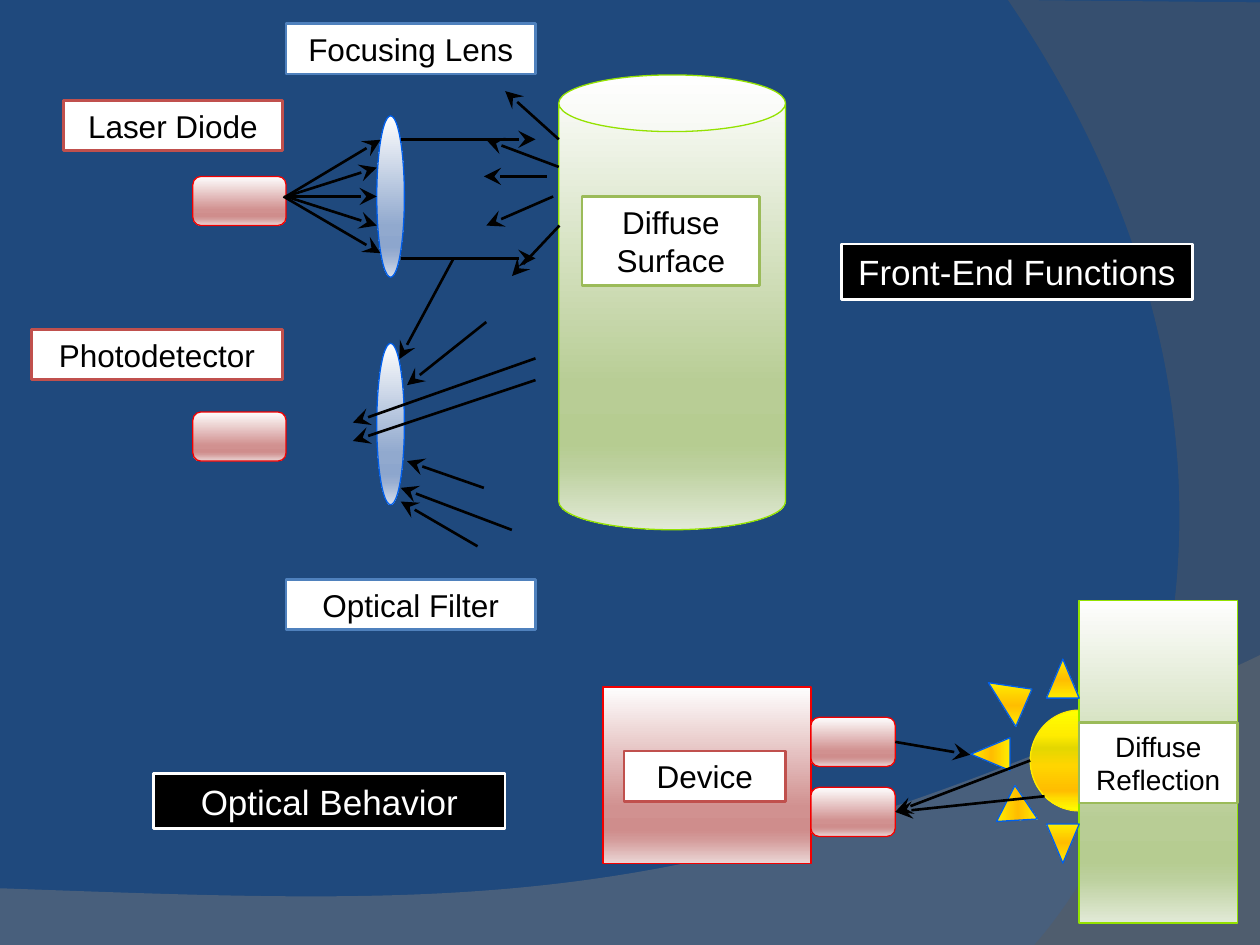
from dataclasses import dataclass
from typing import Optional

from lxml import etree
from pptx import Presentation
from pptx import util as u
from pptx.dml.color import RGBColor
from pptx.enum import shapes as kinds, text
from pptx.oxml.ns import qn

NAVY = RGBColor(0x1F, 0x49, 0x7D)
BLACK = RGBColor(0, 0, 0)
WHITE = RGBColor(0xFF, 0xFF, 0xFF)
LOWER_GREY = RGBColor(0x7B, 0x7B, 0x7B)
SIDE_GREY = RGBColor(0x5A, 0x5A, 0x5A)
RED_FRAME = RGBColor(0xC0, 0x50, 0x4D)
BLUE_FRAME = RGBColor(0x4F, 0x81, 0xBD)
GREEN_FRAME = RGBColor(0x9B, 0xBB, 0x59)
RED_EDGE = RGBColor(0xF3, 0, 0)
BLUE_EDGE = RGBColor(0, 0x5F, 0xEC)
GREEN_EDGE = RGBColor(0x94, 0xE2, 0)
YELLOW = RGBColor(0xFF, 0xEC, 0)

SHAPE = kinds.MSO_SHAPE


@dataclass(frozen=True)
class Finish:
    stops: str  # "percent colour" pairs, from top to bottom
    edge: RGBColor


RED = Finish("0 FEFEFE 68 D19190 81 CF8D8C 86 D39998 100 EBD6D5", RED_EDGE)
BLUE = Finish("0 FEFEFE 68 91A9CE 81 8DA6CD 86 99AED1 100 D6DDEA", BLUE_EDGE)
GREEN = Finish("0 FEFEFE 68 B8CD95 81 B6CC91 86 BCD09D 100 E2EAD7", GREEN_EDGE)
SUN = Finish("0 FFFF00 25 FFEC00 38 E4D700 55 FFD500 80 FFBD00 88 FFDD00 100 FFFF00", YELLOW)
RAY = Finish("0 FFEC00 52 FFBD00 100 FFEC00", BLUE_EDGE)


@dataclass(frozen=True)
class Part:
    kind: int
    box: tuple
    finish: Finish
    rotation: float = 0
    adjust: Optional[float] = None


@dataclass(frozen=True)
class Band:
    corners: list  # the last side, between the last two corners, is curved
    pulls: list
    colour: RGBColor
    opacity: int


@dataclass(frozen=True)
class Label:
    words: str
    box: tuple
    frame: RGBColor
    size: int = 18
    fill: RGBColor = WHITE
    ink: RGBColor = BLACK


def points(values: tuple) -> list:
    return [u.Pt(v) for v in values]


def apply_finish(shape, finish: Finish, angle: float = 270) -> None:
    shape.shadow.inherit = False
    shape.line.color.rgb = finish.edge
    shape.line.width = u.Pt(0.75)
    shape.fill.gradient()
    shape.fill.gradient_angle = angle
    stop_list = shape._element.spPr.find(".//" + qn("a:gsLst"))
    for stop in list(stop_list):
        stop_list.remove(stop)
    tokens = finish.stops.split()
    for percent, colour in zip(tokens[::2], tokens[1::2]):
        stop = etree.SubElement(stop_list, qn("a:gs"), pos=str(int(percent) * 1000))
        etree.SubElement(stop, qn("a:srgbClr"), val=colour)


def draw_part(slide, part: Part):
    shape = slide.shapes.add_shape(part.kind, *points(part.box))
    shape.rotation = part.rotation
    if part.adjust is not None:
        shape.adjustments[0] = part.adjust
    apply_finish(shape, part.finish)
    return shape


def draw_outline(slide, corners: list):
    start, *others = [points(corner) for corner in corners]
    builder = slide.shapes.build_freeform(*start)
    builder.add_line_segments(others, close=True)
    shape = builder.convert_to_shape()
    shape.shadow.inherit = False
    return shape


def draw_band(slide, band: Band) -> None:
    shape = draw_outline(slide, band.corners)
    shape.line.fill.background()
    shape.fill.solid()
    shape.fill.fore_color.rgb = band.colour
    properties = shape._element.spPr
    tint = properties.find(".//" + qn("a:srgbClr"))
    etree.SubElement(tint, qn("a:alpha"), val=str(band.opacity * 1000))
    # Bend the last side
    side = properties.findall(".//" + qn("a:lnTo"))[-1]
    bend = etree.Element(qn("a:cubicBezTo"))
    for x, y in [*band.pulls, band.corners[-1]]:
        etree.SubElement(bend, qn("a:pt"), x=str(u.Pt(x) - shape.left), y=str(u.Pt(y) - shape.top))
    side.getparent().replace(side, bend)


def draw_arrow(slide, x1: float, y1: float, x2: float, y2: float):
    arrow = slide.shapes.add_connector(kinds.MSO_CONNECTOR.STRAIGHT, *points((x1, y1, x2, y2)))
    arrow.line.color.rgb = BLACK
    arrow.line.width = u.Pt(1.5)
    etree.SubElement(arrow.line._get_or_add_ln(), qn("a:tailEnd"), type="stealth", w="lg", len="lg")
    etree.SubElement(arrow._element.spPr, qn("a:effectLst"))
    return arrow


def write_label(shape, label: Label) -> None:
    shape.left, shape.top, shape.width, shape.height = points(label.box)
    shape.fill.solid()
    shape.fill.fore_color.rgb = label.fill
    shape.line.color.rgb = label.frame
    shape.line.width = u.Pt(1.5)
    frame = shape.text_frame
    frame.word_wrap = True
    frame.auto_size = text.MSO_AUTO_SIZE.NONE
    frame.vertical_anchor = text.MSO_ANCHOR.MIDDLE
    paragraph = frame.paragraphs[0]
    paragraph.alignment = text.PP_ALIGN.CENTER
    run = paragraph.add_run()
    run.text = label.words
    run.font.name = "Arial"
    run.font.size = u.Pt(label.size)
    run.font.color.rgb = label.ink


def draw_label(slide, label: Label) -> None:
    shape = slide.shapes.add_shape(SHAPE.RECTANGLE, *points(label.box))
    shape.shadow.inherit = False
    write_label(shape, label)


BANDS = [
    Band([(0, 540), (720, 540), (720, 374.4), (0, 507.6)],
         [(402.5, 524.9), (281.5, 517.7)], LOWER_GREY, 45),
    Band([(720, 1.4), (720, 540), (591.1, 540), (576, 0)],
         [(673.2, 445.7), (733, 229.7)], SIDE_GREY, 40),
]
OPTICS = [
    Part(SHAPE.CAN, (319.3, 42.8, 129.6, 259.9), GREEN, adjust=0.25),
    *(Part(SHAPE.OVAL, (215.3, y, 15.8, 92.2), BLUE) for y in (66.2, 196.2)),
    *(Part(SHAPE.ROUNDED_RECTANGLE, (110.2, y, 53.3, 28.1), RED, adjust=0.167)
      for y in (100.8, 235.4)),
]
REFLECTION = [
    Part(SHAPE.OVAL, (588.7, 405.8, 56.2, 57.6), SUN),
    Part(SHAPE.RECTANGLE, (616.6, 343.2, 90.7, 184.3), GREEN),
    Part(SHAPE.RECTANGLE, (344.6, 392.6, 118.8, 100.8), RED),
    *(Part(SHAPE.ISOSCELES_TRIANGLE, (x, y, 18.7, 22.3), RAY, rotation)
      for x, y, rotation in ((598, 376.6, 0), (556.6, 419.8, 270), (598, 470.9, 180))),
]
SLANTED_RAYS = [  # corners, gradient angle
    ([(580.5, 415.2), (564.8, 390.1), (589.7, 393.8)], 270),
    ([(592.9, 468), (569.5, 469.4), (580, 448.8)], 0),
]
LASER_BEAMS = [(163.4, 112.3, x, y) for x, y in
               ((217.4, 79.9), (215.3, 95.8), (215.3, 112.3), (215.3, 128.9))]
LASER_BEAMS.append((162, 112.3, 217.4, 144.7))
FOCUSED_BEAMS = [(229, y, 306, y) for y in (79.6, 147.6)]
SCATTERED_BEAMS = [
    (319.3, 79.6, 288.7, 52.1), (319.3, 95.4, 277.9, 79.9), (312.5, 100.8, 276.5, 100.8),
    (316.1, 112.3, 277.9, 128.9), (319.7, 128.9, 292.6, 157.7)]
RETURNED_BEAMS = [
    (276.5, 278.8, 232.6, 263.5), (292.5, 302.8, 229, 278.8), (272.9, 312.2, 229, 286.6),
    (277.9, 184, 232.6, 220.1), (259.2, 147.6, 228.2, 205.2),
    (306, 204.8, 201.6, 241.5), (306, 217.2, 201.6, 252)]
LABELS = [
    Label("Diffuse Surface", (332.6, 112.1, 101.5, 51.1), GREEN_FRAME),
    Label("Focusing Lens", (163.4, 13.5, 142.6, 28.8), BLUE_FRAME),
    Label("Laser Diode", (36.2, 57.4, 125.3, 28.8), RED_FRAME),
    Label("Photodetector", (18, 188.2, 143.3, 28.8), RED_FRAME),
    Label("Optical Filter", (163.4, 331, 142.6, 28.8), BLUE_FRAME),
    Label("Diffuse Reflection", (616.6, 412.9, 90.7, 46.1), GREEN_FRAME, 16),
    Label("Device", (356.6, 429.1, 92.2, 28.8), RED_FRAME),
    Label("Optical Behavior", (87.8, 441.9, 200.9, 31.7), WHITE, 20, BLACK, WHITE),
]
TITLE = Label("Front-End Functions", (480.7, 139.5, 200.9, 31.7), WHITE, 20, BLACK, WHITE)


def main() -> None:
    deck = Presentation()
    deck.slide_width, deck.slide_height = points((720, 540))
    slide = deck.slides.add_slide(deck.slide_layouts[5])
    slide.background.fill.solid()
    slide.background.fill.fore_color.rgb = NAVY

    # Background bands
    for band in BANDS:
        draw_band(slide, band)

    # Laser, lens, detector and light paths
    for part in OPTICS:
        draw_part(slide, part)
    for beam in FOCUSED_BEAMS + SCATTERED_BEAMS + RETURNED_BEAMS + LASER_BEAMS:
        draw_arrow(slide, *beam)

    # Device facing the reflecting wall
    for part in REFLECTION:
        draw_part(slide, part)
    for corners, angle in SLANTED_RAYS:
        apply_finish(draw_outline(slide, corners), RAY, angle)
    emitter, receiver = (
        draw_part(slide, Part(SHAPE.ROUNDED_RECTANGLE, (463.4, y, 48.2, 28.1), RED, adjust=0.167))
        for y in (409.9, 449.9))
    draw_arrow(slide, 511.6, 424, 554.4, 431.3).begin_connect(emitter, 3)
    for x, y in ((588.7, 434.6), (596.9, 455)):
        draw_arrow(slide, x, y, 511.6, 464).end_connect(receiver, 3)

    # Labels, then the title in front of the bands
    for label in LABELS:
        draw_label(slide, label)
    title = slide.shapes.title
    slide.shapes._spTree.append(title._element)
    write_label(title, TITLE)

    deck.save("out.pptx")


if __name__ == "__main__":
    main()
